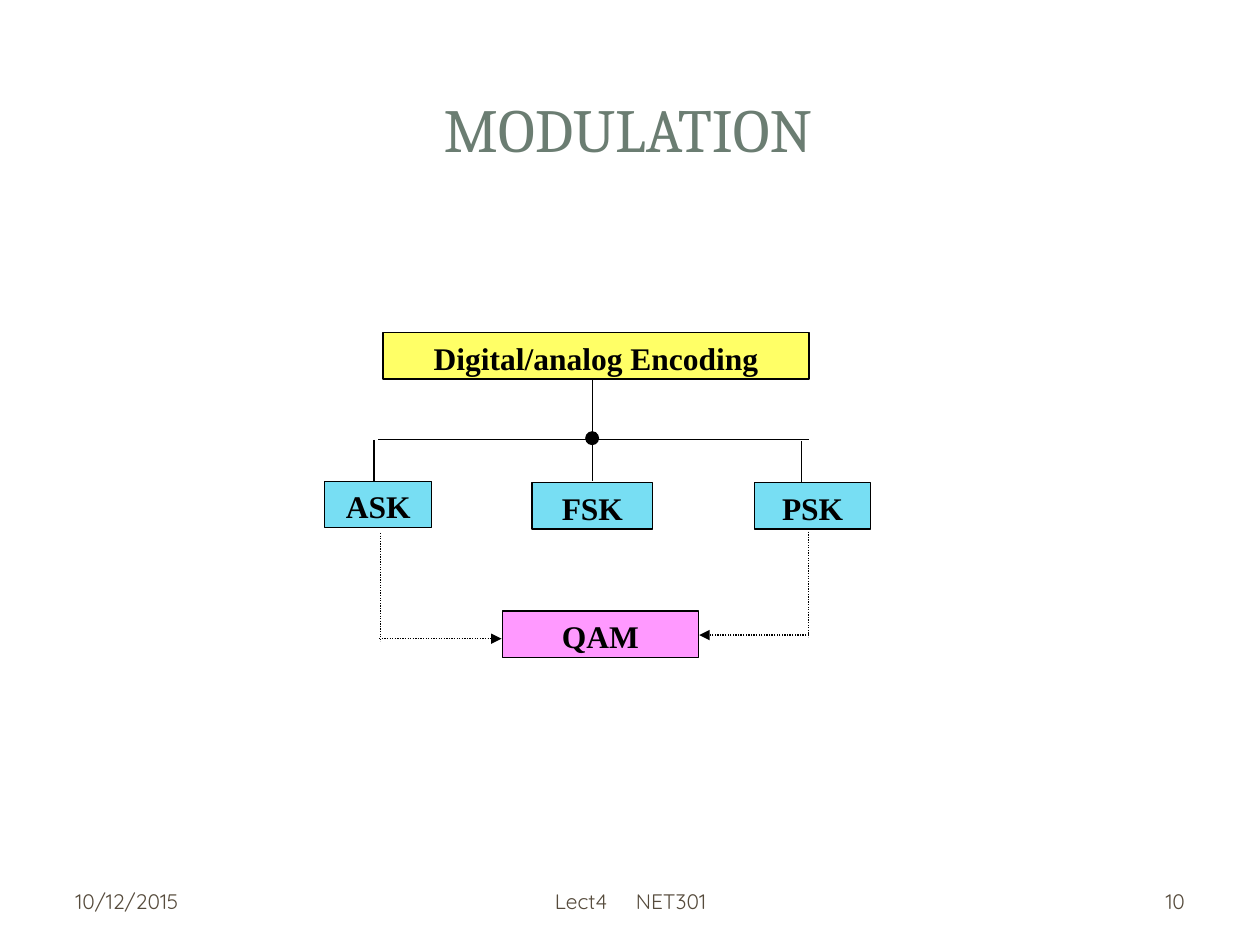
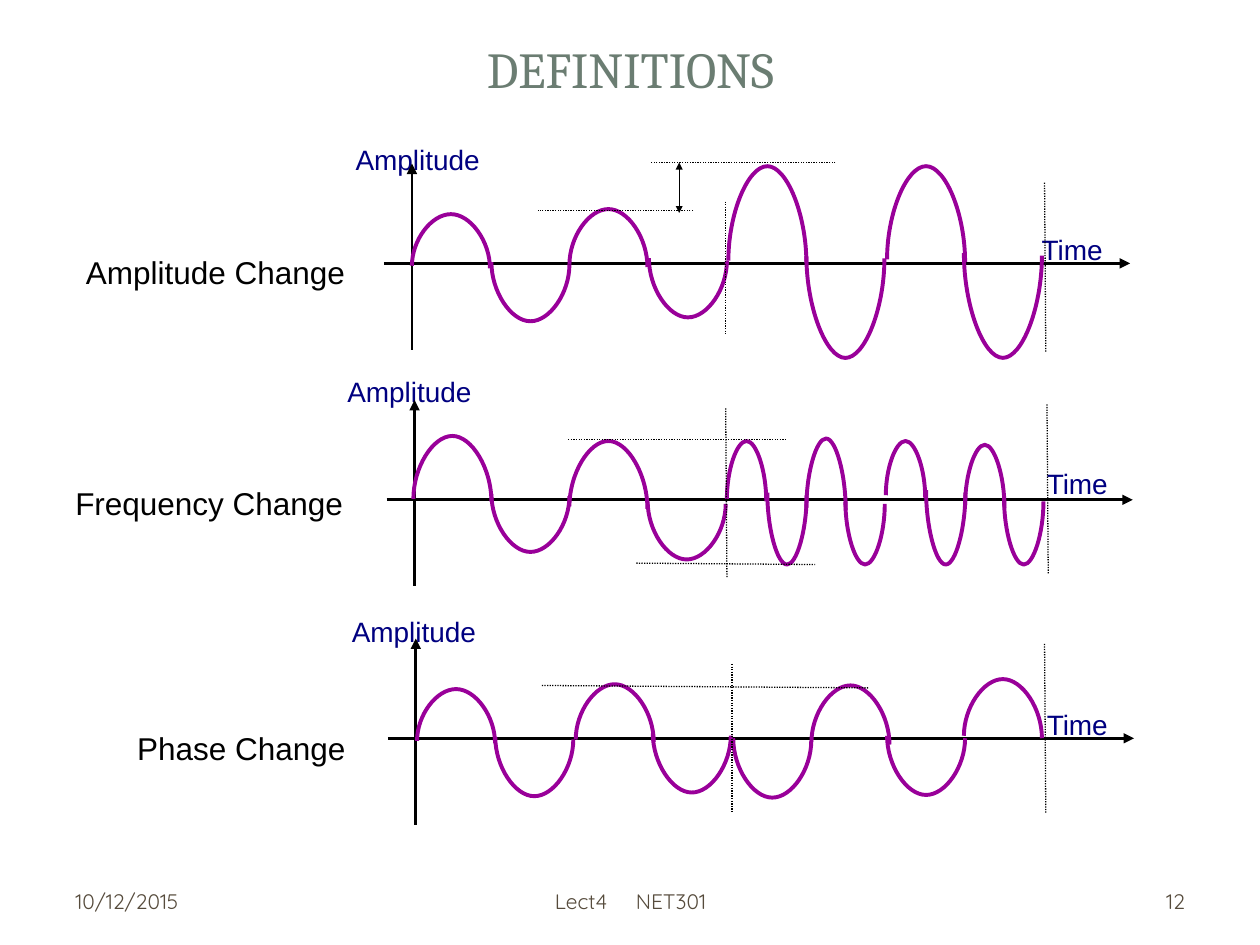
from dataclasses import dataclass
from typing import NamedTuple

from lxml.etree import SubElement
from pptx import Presentation
from pptx.dml.color import RGBColor
from pptx.enum.dml import MSO_LINE_DASH_STYLE as Dash
from pptx.enum.shapes import MSO_CONNECTOR as Connector, MSO_SHAPE as Preset
from pptx.enum.text import MSO_ANCHOR as Anchor, PP_ALIGN as Align
from pptx.oxml.ns import qn
from pptx.util import Pt

COLOURS = {
    "title": "6B7D72", "footer": "564B3C", "black": "000000", "axis_label": "000080",
    "wave": "990099", "root": "FFFF66", "method": "77DEF3", "combined": "FF99FF",
}
DATE = "10/12/2015"
COURSE = ("Lect4", "NET301")
HALF_WAVE, SHORT_HALF_WAVE = 44.6, 22.5
ARC_DROP = 1.4  # an arc ends this much below its start


class Area(NamedTuple):
    left: float
    top: float
    width: float
    height: float


class Style(NamedTuple):
    font: str
    size: float
    colour: str
    bold: bool = False


class Line(NamedTuple):
    x1: float
    y1: float
    x2: float
    y2: float
    weight: float = 0.75
    dotted: bool = False
    head: bool = False
    tail: bool = False
    arrow_size: str = "med"


class Node(NamedTuple):
    text: str
    area: Area
    fill: str


class Arc(NamedTuple):
    left: float
    start: float
    crest: float
    width: float = HALF_WAVE


@dataclass
class Signal:
    name: str
    name_area: Area
    origin: tuple[float, float]
    amplitude_at: tuple[float, float]
    time_at: tuple[float, float]
    guides: list[Line]
    arcs: list[Arc]


FOOTER = Style("Quicksand", 12, "footer")
NODE = Style("Times New Roman", 18, "black", True)
SIGNAL_NAME = Style("Arial", 18, "black")
AXIS_LABEL = Style("Arial", 16, "axis_label")


def rgb(name: str) -> RGBColor:
    return RGBColor.from_string(COLOURS[name])


def add_span(para, text: str, style: Style):
    span = para.add_run()
    span.text = text
    span.font.name, span.font.size, span.font.bold = style.font, Pt(style.size), style.bold
    span.font.color.rgb = rgb(style.colour)
    return span


def add_text(page, area: Area, text: str, style: Style, align=Align.CENTER,
             anchor=Anchor.TOP):
    box = page.shapes.add_textbox(*map(Pt, area))
    frame = box.text_frame
    frame.word_wrap, frame.vertical_anchor = True, anchor
    para = frame.paragraphs[0]
    para.alignment = align
    add_span(para, text, style)
    return para


def add_label(page, area: Area, text: str, style: Style) -> None:
    """Add one line of text that fills its box from side to side."""
    add_text(page, area, text, style)
    frame = page.shapes[-1].text_frame
    frame.word_wrap = False
    frame.margin_left = frame.margin_right = Pt(0)


def add_line(page, line: Line) -> None:
    ends = map(Pt, (line.x1, line.y1, line.x2, line.y2))
    connector = page.shapes.add_connector(Connector.STRAIGHT, *ends)
    connector.line.color.rgb = rgb("black")
    connector.line.width = Pt(line.weight)
    if line.dotted:
        connector.line.dash_style = Dash.ROUND_DOT
    outline = connector.line._get_or_add_ln()
    for tag, wanted in (("a:headEnd", line.head), ("a:tailEnd", line.tail)):
        if wanted:
            SubElement(outline, qn(tag), type="triangle", w=line.arrow_size, len=line.arrow_size)
    SubElement(connector._element.spPr, qn("a:effectLst"))


def add_solid(page, preset, area: Area, fill: str):
    shape = page.shapes.add_shape(preset, *map(Pt, area))
    shape.shadow.inherit = False
    shape.fill.solid()
    shape.fill.fore_color.rgb = rgb(fill)
    shape.line.color.rgb = rgb("black")
    shape.line.width = Pt(0.75)
    return shape


def add_node(page, node: Node) -> None:
    frame = add_solid(page, Preset.RECTANGLE, node.area, node.fill).text_frame
    frame.word_wrap, frame.vertical_anchor = True, Anchor.TOP
    para = frame.paragraphs[0]
    para.alignment = Align.CENTER
    add_span(para, node.text, NODE)


def add_arc(page, arc: Arc) -> None:
    """Draw half a wave as two Bezier curves that meet at the crest."""
    left, start, crest, width = arc
    end, right = start + ARC_DROP, left + width
    points = [
        (left, (start + crest) / 2), (left + width / 4, crest), (left + width / 2, crest),
        (right - width / 4, crest), (right, (end + crest) / 2), (right, end),
    ]
    builder = page.shapes.build_freeform(Pt(left), Pt(start))
    builder.add_line_segments([(Pt(x), Pt(y)) for x, y in points], close=False)
    wave = builder.convert_to_shape()
    wave.shadow.inherit = False
    wave.fill.background()
    wave.line.color.rgb = rgb("wave")
    wave.line.width = Pt(2.25)
    # Turn each three straight segments into one cubic curve
    segments = wave._element.xpath(".//a:lnTo")
    outline = segments[0].getparent()
    for first in (0, 3):
        curve = SubElement(outline, qn("a:cubicBezTo"))
        for segment in segments[first:first + 3]:
            curve.append(segment[0])
            outline.remove(segment)


def add_page(deck, title: str, title_area: Area, title_size: float, number: int):
    page = deck.slides.add_slide(deck.slide_layouts[6])
    add_text(page, title_area, title, Style("Cambria", title_size, "title"), anchor=Anchor.MIDDLE)
    # Footer: date, course, page number
    add_text(page, Area(36, 500.4, 168, 28.8), DATE, FOOTER, Align.LEFT, Anchor.MIDDLE)
    course = add_text(page, Area(246.2, 500.4, 228.2, 28.8), COURSE[0], FOOTER,
                      anchor=Anchor.MIDDLE)
    gap = add_span(course, " ", FOOTER)
    gap._r.get_or_add_rPr().set("spc", "1300")
    add_span(course, COURSE[1], FOOTER)
    add_text(page, Area(516.2, 500.4, 168, 28.8), str(number), FOOTER, Align.RIGHT, Anchor.MIDDLE)
    return page


# Modulation tree
TREE_LINES = [
    Line(338.4, 216.7, 338.4, 275),
    Line(216, 251.3, 462.2, 251.3),
    Line(213.8, 251.3, 213.8, 275),
    Line(457.9, 252, 457.9, 275.8),
    Line(462.2, 302.4, 462.2, 364.3, dotted=True),
    Line(462.2, 362.9, 399.6, 362.9, dotted=True, tail=True),
    Line(217.4, 304.6, 217.4, 366.5, dotted=True),
    Line(216.7, 365, 286.6, 365, dotted=True, tail=True),
]
TREE_NODES = [
    Node("Digital/analog Encoding", Area(218.9, 190.1, 243.4, 26.6), "root"),
    Node("ASK", Area(185.5, 275, 61.2, 26.6), "method"),
    Node("FSK", Area(304, 275.8, 69.1, 26.6), "method"),
    Node("PSK", Area(431.3, 275.8, 66.2, 26.6), "method"),
    Node("QAM", Area(287, 349.2, 112.3, 26.6), "combined"),
]

# Signals
SIGNALS = [
    Signal(
        "Amplitude Change", Area(48.2, 141.1, 149.8, 20.2), (235.4, 150.5),
        (202, 77.8), (594, 129.6),
        [
            Line(477.4, 92.9, 371.5, 92.9, dotted=True),
            Line(396, 120.2, 307.4, 120.2, dotted=True),
            Line(388.1, 92.9, 388.1, 121.7, head=True, tail=True, arrow_size="sm"),
            Line(414.7, 115.2, 414.7, 191.5, dotted=True),
            Line(596.9, 104.4, 597.6, 200.9, dotted=True),
        ],
        [
            Arc(235.4, 151.9, 122.4), Arc(280.8, 149.8, 183.6),
            Arc(325.4, 151.2, 119.5), Arc(370.8, 147.6, 181.4),
            Arc(416.2, 149, 95), Arc(460.8, 146.2, 204.5),
            Arc(506.9, 148.3, 95), Arc(550.8, 144.7, 204.5),
        ],
    ),
    Signal(
        "Frequency Change", Area(41.8, 272.9, 155.5, 20.2), (236.9, 285.6),
        (197.3, 210.2), (596.9, 262.8),
        [
            Line(324.7, 251.3, 449.3, 251.3, dotted=True),
            Line(363.6, 321.8, 465.8, 322.6, dotted=True),
            Line(414.7, 233.3, 415.4, 330.5, dotted=True),
            Line(598.3, 231.1, 599, 327.6, dotted=True),
        ],
        [
            Arc(236.2, 285.1, 249.1), Arc(280.8, 282.2, 315.4),
            Arc(325.4, 289.4, 252), Arc(370.1, 286.6, 319.7),
            Arc(415.4, 285.1, 252, SHORT_HALF_WAVE), Arc(438.5, 281.5, 322.6, SHORT_HALF_WAVE),
            Arc(460.8, 290.2, 250.6, SHORT_HALF_WAVE), Arc(483.1, 286.6, 322.6, SHORT_HALF_WAVE),
            Arc(506.2, 283, 252, SHORT_HALF_WAVE), Arc(529.2, 280.1, 322.6, SHORT_HALF_WAVE),
            Arc(551.5, 288.7, 254.2, SHORT_HALF_WAVE), Arc(573.8, 285.1, 322.6, SHORT_HALF_WAVE),
        ],
    ),
    Signal(
        "Phase Change", Area(77.8, 413.3, 120.2, 20.2), (237.6, 421.9),
        (199.8, 347.8), (596.9, 401),
        [
            Line(496.1, 393.1, 309.6, 391.7, dotted=True),
            Line(418.3, 379.4, 418.3, 463.7, dotted=True),
            Line(596.9, 367.9, 597.6, 465.1, dotted=True),
        ],
        [
            Arc(238.3, 423.4, 393.8), Arc(283, 421.2, 455),
            Arc(329, 422.6, 391), Arc(373, 419, 452.9),
            Arc(419, 421.9, 455.8), Arc(463.7, 424.1, 391.7),
            Arc(506.9, 420.5, 454.3), Arc(550.8, 420.5, 388.1),
        ],
    ),
]


def add_signal(page, signal: Signal) -> None:
    x, y = signal.origin
    add_label(page, signal.name_area, signal.name, SIGNAL_NAME)
    add_label(page, Area(*signal.amplitude_at, 73.4, 15.1), "Amplitude", AXIS_LABEL)
    add_label(page, Area(*signal.time_at, 37.4, 15.1), "Time", AXIS_LABEL)
    add_line(page, Line(x, y - 57, x, y + 49.5, 1.5, head=True))
    add_line(page, Line(x - 16, y, x + 410.4, y, 1.5, tail=True))
    for arc in signal.arcs:
        add_arc(page, arc)
    for guide in signal.guides:
        add_line(page, guide)


def main() -> None:
    deck = Presentation()
    deck.slide_width, deck.slide_height = Pt(720), Pt(540)

    # Slide 1: modulation tree
    page = add_page(deck, "MODULATION", Area(33.8, 32.4, 650.2, 82.1), 35, 10)
    for line in TREE_LINES:
        add_line(page, line)
    for node in TREE_NODES:
        add_node(page, node)
    add_solid(page, Preset.OVAL, Area(334.8, 246.8, 7.2, 7.2), "black")

    # Slide 2: the three kinds of change
    page = add_page(deck, "DEFINITIONS", Area(84.2, 18, 552.2, 41.8), 28.8, 12)
    for signal in SIGNALS:
        add_signal(page, signal)

    deck.save("out.pptx")


if __name__ == "__main__":
    main()
